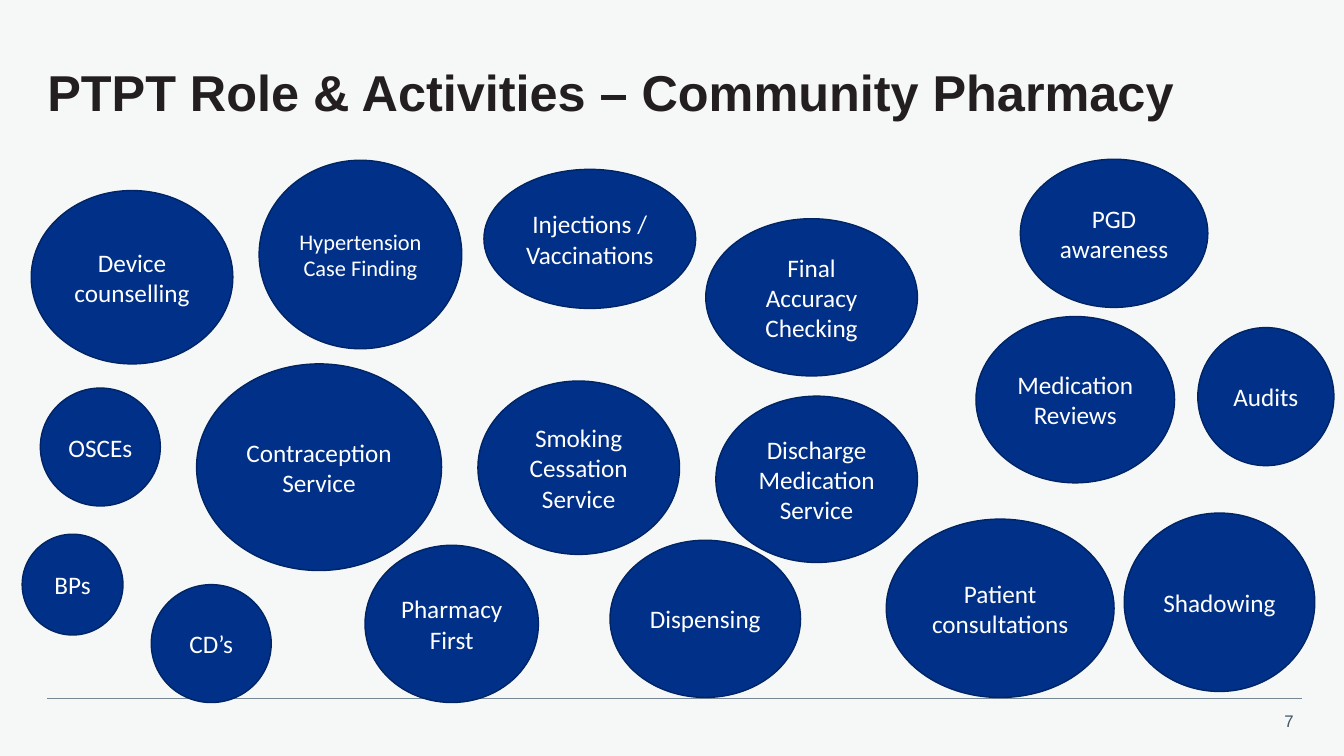
from lxml import etree
from pptx import Presentation
from pptx.dml.color import RGBColor
from pptx.enum.shapes import MSO_CONNECTOR, MSO_SHAPE
from pptx.enum.text import MSO_ANCHOR, PP_ALIGN
from pptx.oxml.ns import qn
from pptx.util import Inches, Pt

LINE, OVAL = MSO_CONNECTOR.STRAIGHT, MSO_SHAPE.OVAL
MIDDLE, TOP = MSO_ANCHOR.MIDDLE, MSO_ANCHOR.TOP
LEFT, CENTER, RIGHT = PP_ALIGN.LEFT, PP_ALIGN.CENTER, PP_ALIGN.RIGHT
COLS, ROWS = 13.33, 7.5

TITLE = dict(name="Arial", size=Pt(36), bold=True)
NUMBER = dict(name="Arial", size=Pt(12))
LABEL = dict(name="Calibri", size=Pt(18))
SMALL = dict(LABEL, size=Pt(16))

# label, left, top, width, height
BUBBLES = [
    ("Discharge Medication Service", 7.1, 3.93, 2, 1.65),
    ("Hypertension Case Finding", 2.57, 1.59, 2.01, 1.87),
    ("BPs", 0.22, 5.3, 1, 1),
    ("Medication Reviews", 9.68, 3.14, 1.97, 1.65),
    ("OSCEs", 0.4, 3.85, 1.19, 1.17),
    ("Patient consultations", 8.79, 5.15, 2.26, 1.77),
    ("Shadowing", 11.15, 5.09, 1.89, 1.77),
    ("Pharmacy First", 3.62, 5.41, 1.72, 1.56),
    ("Device counselling", 0.31, 1.89, 2, 1.72),
    ("Audits", 11.88, 3.25, 1.35, 1.37),
    ("Smoking Cessation Service", 4.74, 3.78, 2, 1.72),
    ("Contraception Service", 1.95, 3.61, 2.43, 2.05),
    ("Injections / Vaccinations", 4.8, 1.68, 2.1, 1.38),
    ("Dispensing", 6.05, 5.36, 1.89, 1.56),
    ("CD’s", 1.5, 5.8, 1.19, 1.17),
    ("Final Accuracy Checking", 7, 2.17, 2.1, 1.56),
    ("PGD awareness", 10.12, 1.58, 1.86, 1.47),
]


def color(text):
    return RGBColor.from_string(text)


class Deck:
    """Draws on one slide; lengths are columns and rows of the grid."""

    navy, edge, rule_ink = "003087", "002464", "768692"
    back, ink, grey, white = "F6F8F8", "231F20", "425563", "FFFFFF"

    def __init__(self):
        self.file = Presentation()
        self.file.slide_width = Inches(COLS)
        self.file.slide_height = Inches(ROWS)
        self.slide = self.file.slides.add_slide(self.file.slide_layouts[6])
        self.fill(self.slide.background, self.back)

    def grid(self, *cells):
        """Turn column, row, column, row ... into slide lengths."""
        wide = self.file.slide_width / COLS
        high = self.file.slide_height / ROWS
        return [round(n * (high if i % 2 else wide))
                for i, n in enumerate(cells)]

    def fill(self, item, tint):
        item.fill.solid()
        item.fill.fore_color.rgb = color(tint)

    def stroke(self, item, tint, width):
        item.line.color.rgb = color(tint)
        item.line.width = Pt(width)

    def label(self, shape, words, style, tint, align, anchor):
        frame = shape.text_frame
        frame.word_wrap = True
        frame.vertical_anchor = anchor
        par = frame.paragraphs[0]
        par.text = words
        par.alignment = align
        for key, value in style.items():
            setattr(par.font, key, value)
        par.font.color.rgb = color(tint)
        return frame

    def text(self, words, cells, style, tint, align, anchor):
        box = self.slide.shapes.add_textbox(*self.grid(*cells))
        return self.label(box, words, style, tint, align, anchor)

    def title(self, words, *cells):
        frame = self.text(words, cells, TITLE, self.ink, LEFT, MIDDLE)
        for side in ("left", "top", "right", "bottom"):
            setattr(frame, "margin_" + side, 0)
        frame.paragraphs[0].line_spacing = 0.9

    def number(self, words, *cells):
        self.text(words, cells, NUMBER, self.grey, RIGHT, TOP)

    def rule(self, *ends):
        line = self.slide.shapes.add_connector(LINE, *self.grid(*ends))
        self.stroke(line, self.rule_ink, 0.5)
        etree.SubElement(line.element.spPr, qn("a:effectLst"))

    def bubble(self, words, *cells, style=LABEL):
        oval = self.slide.shapes.add_shape(OVAL, *self.grid(*cells))
        oval.shadow.inherit = False
        self.fill(oval, self.navy)
        self.stroke(oval, self.edge, 1)
        self.label(oval, words, style, self.white, CENTER, MIDDLE)


def main():
    deck = Deck()
    deck.number("7", 12.52, 7, 0.41, 0.3)
    deck.rule(0.47, 6.93, 12.91, 6.93)
    deck.title("PTPT Role & Activities – Community Pharmacy",
               0.47, 0.47, 12.47, 0.95)
    for words, *cells in BUBBLES:
        style = SMALL if words.startswith("Hypertension") else LABEL
        deck.bubble(words, *cells, style=style)
    deck.file.save("out.pptx")


if __name__ == "__main__":
    main()
